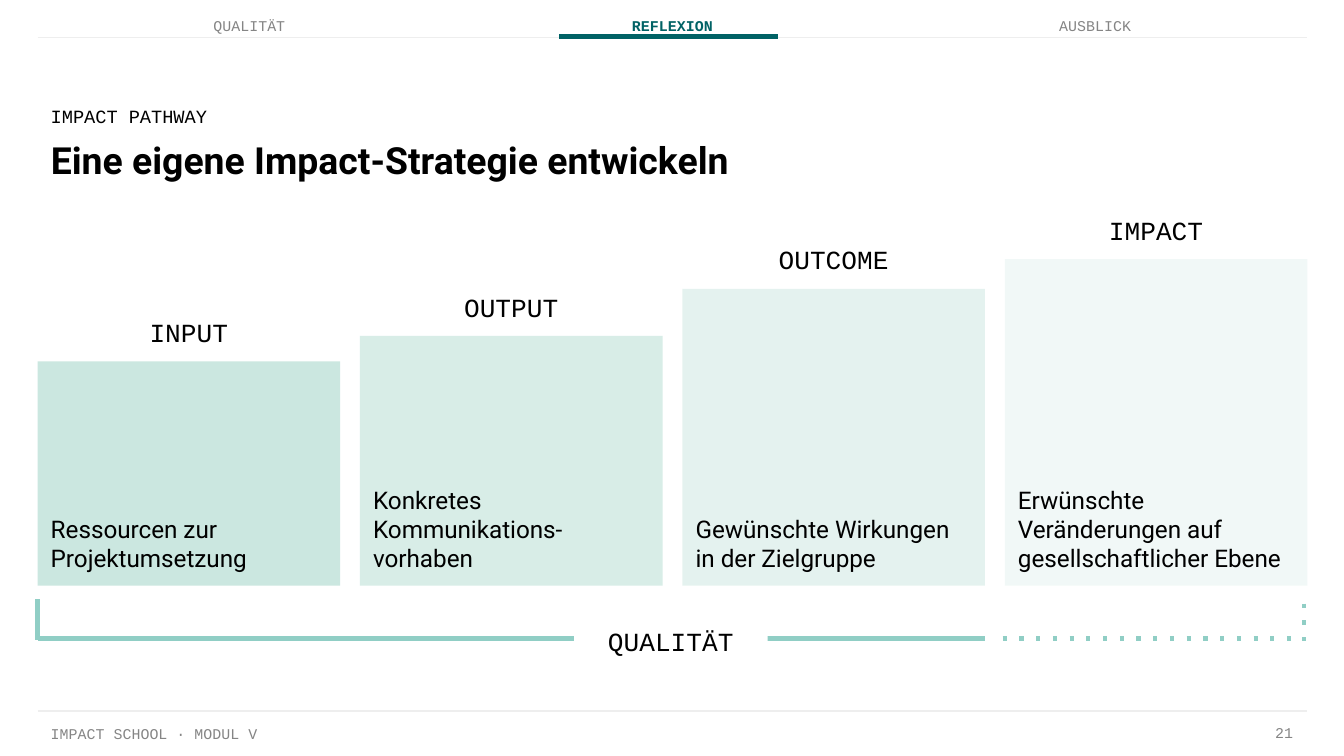
from collections import namedtuple

from lxml.etree import SubElement
from pptx import Presentation
from pptx.dml.color import RGBColor
from pptx.enum.shapes import MSO_CONNECTOR, MSO_SHAPE
from pptx.enum.text import MSO_ANCHOR as Anchor, MSO_AUTO_SIZE, PP_ALIGN as Align
from pptx.oxml.ns import qn
from pptx.util import Cm, Pt

Box = namedtuple("Box", "left top width height")

COLORS = {
    "ink": "000000",
    "muted": "858585",
    "accent": "006265",
    "rule": "EEEEEE",
    "step": "CBE7E0",
    "bracket": "90CEC5",
    "paper": "FFFFFF",
}
MONO, SANS = "Courier New", "Roboto"
STYLES = {
    "small": {"name": MONO, "size": Pt(8), "bold": False},
    "active": {"name": MONO, "size": Pt(8), "bold": True},
    "kicker": {"name": MONO, "size": Pt(10), "bold": False},
    "label": {"name": MONO, "size": Pt(14), "bold": False},
    "title": {"name": SANS, "size": Pt(20), "bold": True},
    "body": {"name": SANS, "size": Pt(13), "bold": False},
}
TABS = [
    ("QUALITÄT", 1.78, 4.45, "small", "muted"),
    ("REFLEXION", 7.67, 8.66, "active", "accent"),
    ("AUSBLICK", 16.36, 7.26, "small", "muted"),
]
STEPS = [
    ("INPUT", "Ressourcen zur Projektumsetzung", 4.24),
    ("OUTPUT", "Konkretes Kommunikations-\vvorhaben", 4.72),
    ("OUTCOME", "Gewünschte Wirkungen in der Zielgruppe", 5.61),
    ("IMPACT", "Erwünschte Veränderungen auf gesellschaftlicher Ebene", 6.17),
]
STEP_WIDTH = 5.72


def rgb(color):
    """Return the named colour."""
    return RGBColor.from_string(COLORS[color])


def lengths(box):
    """Return the sides of a box as lengths."""
    return [Cm(side) for side in box]


def write(shape, text, style, color="ink", align=Align.LEFT, anchor=Anchor.MIDDLE):
    """Fill a shape with one formatted paragraph and return it."""
    frame = shape.text_frame
    settings = {"word_wrap": True, "auto_size": MSO_AUTO_SIZE.NONE, "vertical_anchor": anchor}
    settings.update({f"margin_{side}": Cm(0.25) for side in ("left", "top", "right", "bottom")})
    for name, value in settings.items():
        setattr(frame, name, value)
    para = frame.paragraphs[0]
    para.text = text
    para.alignment = align
    for span in para.runs:
        for name, value in STYLES[style].items():
            setattr(span.font, name, value)
        span.font.color.rgb = rgb(color)
    return para


def add_text(shapes, box, text, *formats, **options):
    """Add a text box and return its paragraph."""
    return write(shapes.add_textbox(*lengths(box)), text, *formats, **options)


def add_block(shapes, box, color, opacity=100):
    """Add a rectangle without outline."""
    block = shapes.add_shape(MSO_SHAPE.RECTANGLE, *lengths(box))
    block.shadow.inherit = False
    block.fill.solid()
    block.fill.fore_color.rgb = rgb(color)
    block.line.fill.background()
    if opacity < 100:
        tint = block._element.spPr.find(qn("a:solidFill")).find(qn("a:srgbClr"))
        SubElement(tint, qn("a:alpha"), val=str(opacity * 1000))
    return block


def add_line(shapes, start, end, color, width=2.25, dotted=False):
    """Add a straight line between two points."""
    line = shapes.add_connector(MSO_CONNECTOR.STRAIGHT, *lengths(start + end))
    line.line.color.rgb = rgb(color)
    line.line.width = Pt(width)
    properties = line._element.spPr
    if dotted:
        SubElement(properties.find(qn("a:ln")), qn("a:prstDash"), val="dot")
    SubElement(properties, qn("a:effectLst"))


def add_navigation(page, box):
    """Place the section tabs over a rule."""
    base = box.top + box.height
    add_line(page.shapes, (box.left, base), (box.left + box.width, base), "rule", 0.75)
    for text, offset, width, style, color in TABS:
        tab = Box(box.left + offset, box.top + 0.05, width, 0.86)
        add_text(page.shapes, tab, text, style, color, Align.CENTER)
    add_line(page.shapes, (box.left + 9.86, base - 0.02), (box.left + 14, base - 0.02), "accent")


def add_heading(page, box):
    """Place the kicker and the title."""
    title = page.shapes.title
    sides = Box(box.left, box.top + 0.41, box.width, box.height - 0.41)
    for name, value in zip(Box._fields, lengths(sides)):
        setattr(title, name, value)
    write(title, "Eine eigene Impact-Strategie entwickeln", "title", anchor=Anchor.TOP)
    kicker = Box(box.left, box.top, box.width, 0.51)
    add_text(page.shapes, kicker, "IMPACT PATHWAY", "kicker")


def add_steps(page, box):
    """Place the rising blocks on the base of the box, each under its label."""
    pitch = (box.width - STEP_WIDTH) / (len(STEPS) - 1)
    for index, (label, text, height) in enumerate(STEPS):
        left = box.left + index * pitch
        top = box.top + box.height - height
        step = Box(left, top, STEP_WIDTH, height)
        block = add_block(page.shapes, step, "step", 100 - 25 * index)
        write(block, text, "body", anchor=Anchor.BOTTOM)
        above = Box(left, top - 0.91, STEP_WIDTH, 0.71)
        add_text(page.shapes, above, label, "label", align=Align.CENTER)


def add_bracket(page, box):
    """Place the quality bracket, dotted at its right end."""
    shapes = page.shapes.add_group_shape().shapes
    right, base = box.left + box.width, box.top + 0.74
    add_line(shapes, (box.left, base), (box.left + 17.91, base), "bracket")
    add_line(shapes, (box.left + 18.24, base), (right - 0.13, base), "bracket", dotted=True)
    add_line(shapes, (box.left, box.top), (box.left, base + 0.03), "bracket")
    add_line(shapes, (right, box.top + 0.08), (right, base + 0.08), "bracket", dotted=True)
    plate = add_block(shapes, Box(box.left + 10.14, box.top + 0.25, 3.66, 0.94), "paper")
    write(plate, "QUALITÄT", "label", align=Align.CENTER, anchor=Anchor.TOP)


def add_footer(page, box):
    """Place the course name and the page number under a rule."""
    right = box.left + box.width
    add_line(page.shapes, (box.left, box.top), (right, box.top), "rule", 0.75)
    course = Box(box.left, box.top, 16, box.height)
    add_text(page.shapes, course, "IMPACT SCHOOL · MODUL V", "small", "muted", anchor=Anchor.TOP)
    number = Box(right - 1.11, box.top, 1.09, box.height)
    add_text(page.shapes, number, "21", "small", "muted", Align.RIGHT).line_spacing = 0.8


def main():
    """Build the slide and save it."""
    deck = Presentation()
    deck.slide_width, deck.slide_height = Cm(25.4), Cm(14.29)
    page = deck.slides.add_slide(deck.slide_layouts[5])
    left, width = 0.71, 24
    add_navigation(page, Box(left, 0, width, 0.71))
    add_heading(page, Box(left, 1.93, 19.74, 1.73))
    add_steps(page, Box(left, 3.96, width, 7.11))
    add_bracket(page, Box(left, 11.33, 23.93, 1.19))
    add_footer(page, Box(left, 13.44, width, 0.86))
    deck.save("out.pptx")


if __name__ == "__main__":
    main()
